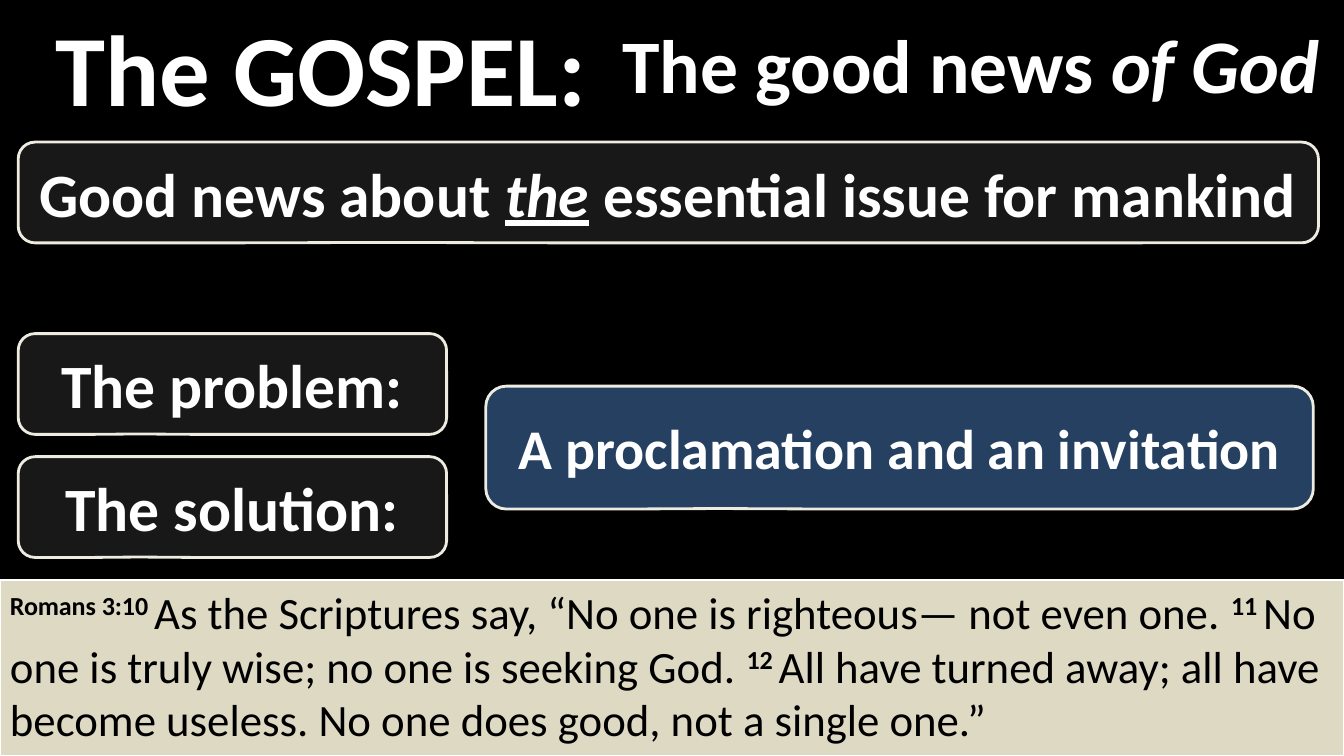
from dataclasses import dataclass

from lxml.etree import SubElement
from pptx import Presentation
from pptx.dml.color import RGBColor
from pptx.enum.shapes import MSO_SHAPE as Preset
from pptx.enum.text import MSO_ANCHOR as Anchor, PP_ALIGN as Align
from pptx.oxml.ns import qn
from pptx.util import Pt

COLORS = {
    "black": "000000",
    "white": "FFFFFF",
    "charcoal": "262626",
    "navy": "254061",
    "cream": "EEECE1",
    "parchment": "DDD9C3",
}
FONT = "Calibri"
CALLOUT_ADJUSTMENTS = (-0.219, 0.496, 0.167)
BOLD = {"bold": True}
PLAIN = {"bold": False}
BOLD_ITALIC = {"bold": True, "italic": True}
STRESSED = {"bold": True, "italic": True, "underline": True}
VERSE = {"bold": True, "superscript": True}


@dataclass(frozen=True)
class Panel:
    box: tuple[float, float, float, float]
    runs: list[tuple[str, dict]]
    size: float
    preset: Preset | None = None
    fill: str = ""
    opacity: int = 100
    line: str = "cream"
    line_width: float = 2
    ink: str = "white"
    align: Align = Align.CENTER
    anchor: Anchor = Anchor.MIDDLE
    left_inset: float = 7.2


def rgb(name: str) -> RGBColor:
    return RGBColor.from_string(COLORS[name])


def write_text(frame, panel: Panel) -> None:
    frame.word_wrap = True
    frame.vertical_anchor = panel.anchor
    frame.margin_left = Pt(panel.left_inset)
    paragraph = frame.paragraphs[0]
    paragraph.alignment = panel.align
    for text, formats in panel.runs:
        run = paragraph.add_run()
        run.text = text
        font = run.font
        font.color.rgb = rgb(panel.ink)
        for key, value in {"name": FONT, "size": Pt(panel.size), **formats}.items():
            if key == "superscript":
                run._r.get_or_add_rPr().set("baseline", "30000")
            else:
                setattr(font, key, value)


def draw(slide, panel: Panel) -> None:
    box = [Pt(length) for length in panel.box]
    if panel.preset is None:
        shape = slide.shapes.add_textbox(*box)
    else:
        shape = slide.shapes.add_shape(panel.preset, *box)
        shape.shadow.inherit = False
        shape.fill.solid()
        shape.fill.fore_color.rgb = rgb(panel.fill)
        if panel.opacity < 100:
            color = shape.fill._xPr.find(f".//{qn('a:srgbClr')}")
            SubElement(color, qn("a:alpha"), val=str(panel.opacity * 1000))
        shape.line.color.rgb = rgb(panel.line)
        shape.line.width = Pt(panel.line_width)
        if panel.preset == Preset.ROUNDED_RECTANGULAR_CALLOUT:
            for index, value in enumerate(CALLOUT_ADJUSTMENTS):
                shape.adjustments[index] = value
    write_text(shape.text_frame, panel)


def dark_callout(top: float, width: float, runs: list[tuple[str, dict]]) -> Panel:
    return Panel((13, top, width, 72), runs, 44,
                 Preset.ROUNDED_RECTANGULAR_CALLOUT, "charcoal", 65)


PANELS = [
    # Heading
    Panel((0, 0, 450, 95), [("The GOSPEL:", BOLD)], 72,
          align=Align.LEFT, left_inset=39.7),
    Panel((426.2, 0, 535, 90),
          [("The good news ", BOLD), ("of God", BOLD_ITALIC)], 54),
    # Main point, problem and solution
    dark_callout(101.5, 928.8, [
        ("Good news about ", BOLD),
        ("the", STRESSED),
        (" essential issue for mankind", BOLD),
    ]),
    dark_callout(238.3, 306, [("The problem:", BOLD)]),
    dark_callout(326.2, 306, [("The solution:", BOLD)]),
    # Scripture passage
    Panel((0, 414, 960, 126), [
        ("Romans 3:10 ", VERSE),
        ("As the Scriptures say, “No one is righteous— not even one. ", PLAIN),
        ("11 ", VERSE),
        ("No one is truly wise; no one is seeking God. ", PLAIN),
        ("12 ", VERSE),
        ("All have turned away; all have become useless. "
         "No one does good, not a single one.”", PLAIN),
    ], 32, Preset.RECTANGLE, "parchment", line="white", line_width=1.5,
        ink="black", align=Align.LEFT, anchor=Anchor.TOP),
    # Proclamation
    Panel((347, 275.8, 591.1, 87.8),
          [("A proclamation and an invitation", BOLD)], 40,
          Preset.ROUNDED_RECTANGULAR_CALLOUT, "navy"),
]


def main() -> None:
    deck = Presentation()
    deck.slide_width, deck.slide_height = Pt(960), Pt(540)
    slide = deck.slides.add_slide(deck.slide_layouts[6])
    slide.background.fill.solid()
    slide.background.fill.fore_color.rgb = rgb("black")
    for panel in PANELS:
        draw(slide, panel)
    deck.save("out.pptx")


if __name__ == "__main__":
    main()
